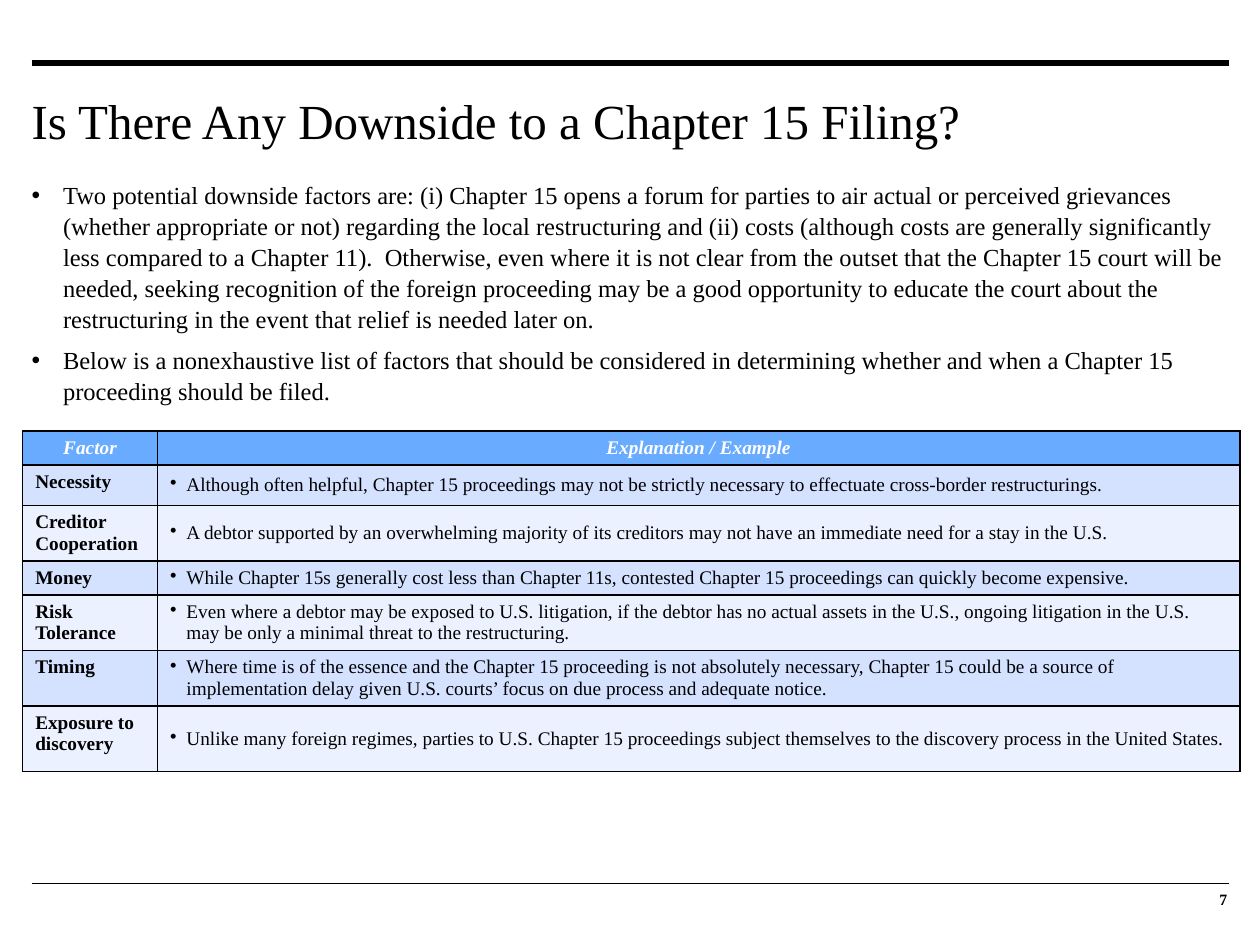
import pptx
import pptx.util
import pptx.dml.color
import pptx.enum.shapes
import pptx.enum.text
import pptx.oxml.ns
from lxml import etree

Inches, Pt = pptx.util.Inches, pptx.util.Pt
RGBColor = pptx.dml.color.RGBColor
Align, Anchor = pptx.enum.text.PP_ALIGN, pptx.enum.text.MSO_ANCHOR
qn = pptx.oxml.ns.qn

BLACK = RGBColor(0x00, 0x00, 0x00)
WHITE = RGBColor(0xFF, 0xFF, 0xFF)
HEADER_BLUE = RGBColor(0x68, 0xAB, 0xFF)
BAND_DARK = RGBColor(0xD4, 0xE2, 0xFF)
BAND_LIGHT = RGBColor(0xEB, 0xF1, 0xFF)

TITLE = "Is There Any Downside to a Chapter 15 Filing?"
POINTS = [
    "Two potential downside factors are: (i) Chapter 15 opens a forum for parties to air actual or "
    "perceived grievances (whether appropriate or not) regarding the local restructuring and (ii) costs "
    "(although costs are generally significantly less compared to a Chapter 11).  Otherwise, even where "
    "it is not clear from the outset that the Chapter 15 court will be needed, seeking recognition of "
    "the foreign proceeding may be a good opportunity to educate the court about the restructuring in "
    "the event that relief is needed later on.",
    "Below is a nonexhaustive list of factors that should be considered in determining whether and when "
    "a Chapter 15 proceeding should be filed.",
]
# Factor, explanation, row height in inches
ROWS = [
    ("Factor", "Explanation / Example", 0.27),
    ("Necessity", "Although often helpful, Chapter 15 proceedings may not be strictly necessary to "
     "effectuate cross-border restructurings.", 0.32),
    ("Creditor Cooperation", "A debtor supported by an overwhelming majority of its creditors may not "
     "have an immediate need for a stay in the U.S.", 0.44),
    ("Money", "While Chapter 15s generally cost less than Chapter 11s, contested Chapter 15 proceedings "
     "can quickly become expensive.", 0.27),
    ("Risk Tolerance", "Even where a debtor may be exposed to U.S. litigation, if the debtor has no "
     "actual assets in the U.S., ongoing litigation in the U.S. may be only a minimal threat to the "
     "restructuring.", 0.44),
    ("Timing", "Where time is of the essence and the Chapter 15 proceeding is not absolutely necessary, "
     "Chapter 15 could be a source of implementation delay given U.S. courts’ focus on due process and "
     "adequate notice.", 0.44),
    ("Exposure to discovery", "Unlike many foreign regimes, parties to U.S. Chapter 15 proceedings "
     "subject themselves to the discovery process in the United States.", 0.52),
]


def add_bullet(para, indent):
    properties = para._p.get_or_add_pPr()
    properties.set("marL", str(Inches(indent)))
    properties.set("indent", str(-Inches(indent)))
    etree.SubElement(properties, qn("a:buChar"), char="•")


def format_text(para, size, color=BLACK, bold=False, italic=False):
    para.font.name = "Times New Roman"
    para.font.size = Pt(size)
    para.font.color.rgb = color
    para.font.bold = bold
    para.font.italic = italic


deck = pptx.Presentation()
deck.slide_width, deck.slide_height = Inches(10), Inches(7.5)
page = deck.slides.add_slide(deck.slide_layouts[1])
title, body = page.shapes.title, page.placeholders[1]

# Rules above the title and above the footer
for y, weight in ((0.5, 3), (7.01, 0.5)):
    rule = page.shapes.add_connector(pptx.enum.shapes.MSO_CONNECTOR.STRAIGHT,
                                     Inches(0.25), Inches(y), Inches(9.75), Inches(y))
    rule.line.color.rgb = BLACK
    rule.line.width = Pt(weight)
    etree.SubElement(rule._element.spPr, qn("a:effectLst"))

# Text boxes: title, list and page number
number = page.shapes.add_textbox(Inches(9.08), Inches(7.01), Inches(0.66), Inches(0.26))
for box, left, top, width, height, anchor in (
        (title, 0.25, 0.67, 9.5, 0.99, Anchor.TOP),
        (body, 0.25, 1.42, 9.5, 4.88, Anchor.TOP),
        (number, 9.08, 7.01, 0.66, 0.26, Anchor.MIDDLE)):
    box.left, box.top = Inches(left), Inches(top)
    box.width, box.height = Inches(width), Inches(height)
    frame = box.text_frame
    frame.margin_left = frame.margin_right = frame.margin_top = frame.margin_bottom = 0
    frame.word_wrap = True
    frame.auto_size = pptx.enum.text.MSO_AUTO_SIZE.NONE
    frame.vertical_anchor = anchor

title.text_frame.text = TITLE
para = title.text_frame.paragraphs[0]
para.alignment = Align.LEFT
para.line_spacing = 1.1
format_text(para, 28)

body.text_frame.text = "\n".join(POINTS)
for para in body.text_frame.paragraphs:
    para.space_before = Pt(0)
    para.space_after = Pt(6)
    para.line_spacing = 1.05
    add_bullet(para, 0.25)
    format_text(para, 14)

number.text_frame.text = "7"
para = number.text_frame.paragraphs[0]
para.alignment = Align.RIGHT
format_text(para, 9, bold=True)

# Factor table
table = page.shapes.add_table(len(ROWS), 2, Inches(0.18), Inches(3.42), Inches(9.66),
                              Inches(sum(row[2] for row in ROWS))).table
table.columns[0].width, table.columns[1].width = Inches(1.07), Inches(8.59)
for row_index, (factor, explanation, height) in enumerate(ROWS):
    table.rows[row_index].height = Inches(height)
    header = row_index == 0
    band = HEADER_BLUE if header else (BAND_LIGHT, BAND_DARK)[row_index % 2]
    for column, text in enumerate((factor, explanation)):
        cell = table.cell(row_index, column)
        cell.text = text
        para = cell.text_frame.paragraphs[0]
        if header:
            para.alignment = Align.CENTER
        elif column == 1:
            cell.vertical_anchor = Anchor.MIDDLE
            add_bullet(para, 0.13)
        format_text(para, 11, WHITE if header else BLACK, bold=header or column == 0, italic=header)

        # Borders come before the fill in the cell properties
        properties = cell._tc.get_or_add_tcPr()
        for side in ("a:lnL", "a:lnR", "a:lnT", "a:lnB"):
            border = etree.SubElement(properties, qn(side), w=str(Pt(1)))
            fill = etree.SubElement(border, qn("a:solidFill"))
            etree.SubElement(fill, qn("a:srgbClr"), val=str(BLACK))
        cell.fill.solid()
        cell.fill.fore_color.rgb = band

deck.save("out.pptx")
